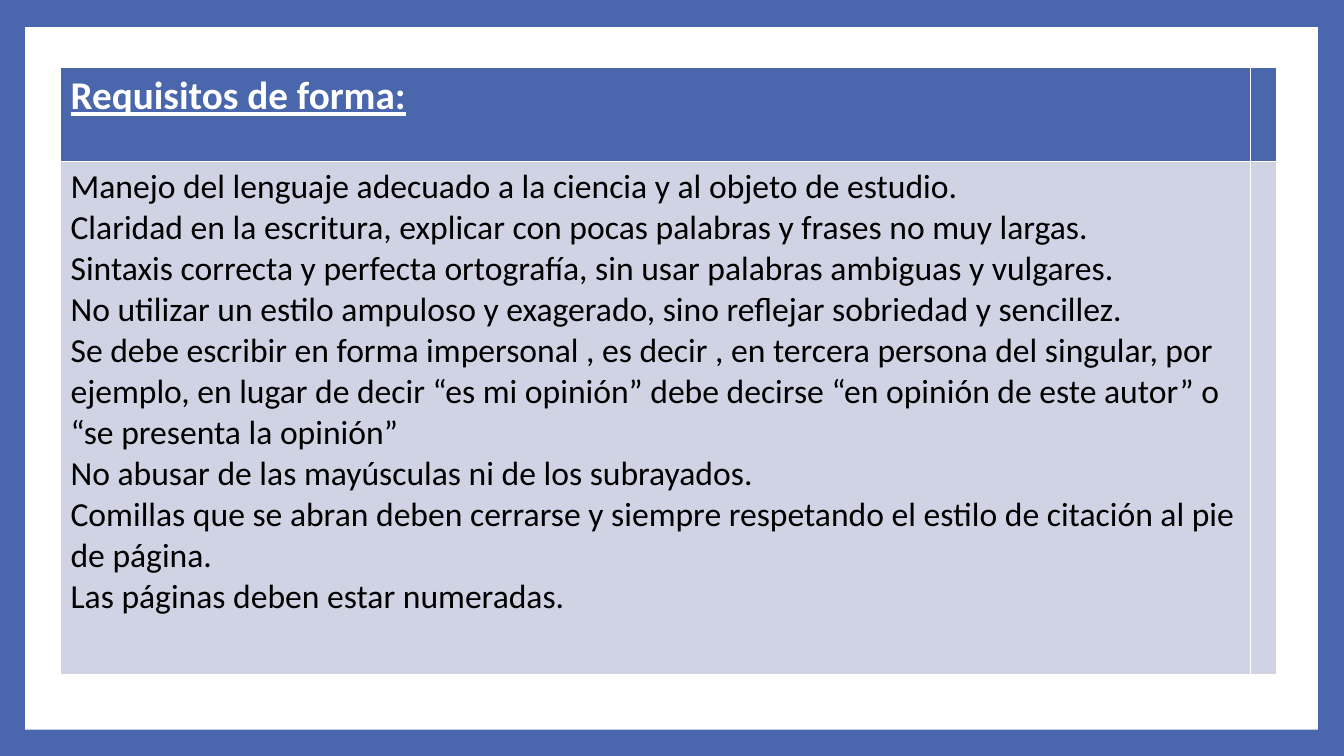
"""Build a slide with a framed table of formal writing requirements."""
import pptx
import pptx.dml.color
import pptx.enum.shapes
import pptx.util

COLORS = {"blue": "4A66AC", "pale": "D0D3E3", "white": "FFFFFF", "black": "000000"}
HEADING = ["Requisitos de forma:"]
REQUIREMENTS = [
    "Manejo del lenguaje adecuado a la ciencia y al objeto de estudio.",
    "Claridad en la escritura, explicar con pocas palabras y frases no muy largas.",
    "Sintaxis correcta y perfecta ortografía, sin usar palabras ambiguas y vulgares.",
    "No utilizar un estilo ampuloso y exagerado, sino reflejar sobriedad y sencillez.",
    "Se debe escribir en forma impersonal , es decir , en tercera persona del singular, "
    "por ejemplo, en lugar de decir “es mi opinión” debe decirse “en opinión de este "
    "autor” o “se presenta la opinión”",
    "No abusar de las mayúsculas ni de los subrayados.",
    "Comillas que se abran deben cerrarse y siempre respetando el estilo de citación "
    "al pie de página.",
    "Las páginas deben estar numeradas.",
]
ROWS = [
    (0.93, HEADING, 28, "white", "blue", True),
    (5.09, REQUIREMENTS, 24, "black", "pale", False),
]
COLUMNS = [11.8, 0.26]


def paint(fill, name):
    fill.solid()
    fill.fore_color.rgb = pptx.dml.color.RGBColor.from_string(COLORS[name])


deck = pptx.Presentation()
deck.slide_width = pptx.util.Inches(13.33)
deck.slide_height = pptx.util.Inches(7.5)
slide = deck.slides.add_slide(deck.slide_layouts[6])
paint(slide.background.fill, "blue")

panel = slide.shapes.add_shape(
    pptx.enum.shapes.MSO_SHAPE.RECTANGLE,
    *map(pptx.util.Inches, (0.25, 0.27, 12.82, 6.97)),
)
panel.shadow.inherit = False
paint(panel.fill, "white")
panel.line.fill.background()

height = sum(row[0] for row in ROWS)
table = slide.shapes.add_table(
    len(ROWS), len(COLUMNS),
    *map(pptx.util.Inches, (0.6, 0.67, sum(COLUMNS), height)),
).table
for column, width in zip(table.columns, COLUMNS):
    column.width = pptx.util.Inches(width)

for row, (row_height, lines, size, ink, shade, is_heading) in zip(table.rows, ROWS):
    row.height = pptx.util.Inches(row_height)
    for cell in row.cells:
        paint(cell.fill, shade)
    frame = row.cells[0].text_frame
    frame.text = "\n".join(lines)
    for paragraph in frame.paragraphs:
        font = paragraph.font
        font.name = "Calibri"
        font.size = pptx.util.Pt(size)
        font.bold = is_heading
        font.underline = is_heading
        paint(font.fill, ink)

deck.save("out.pptx")
